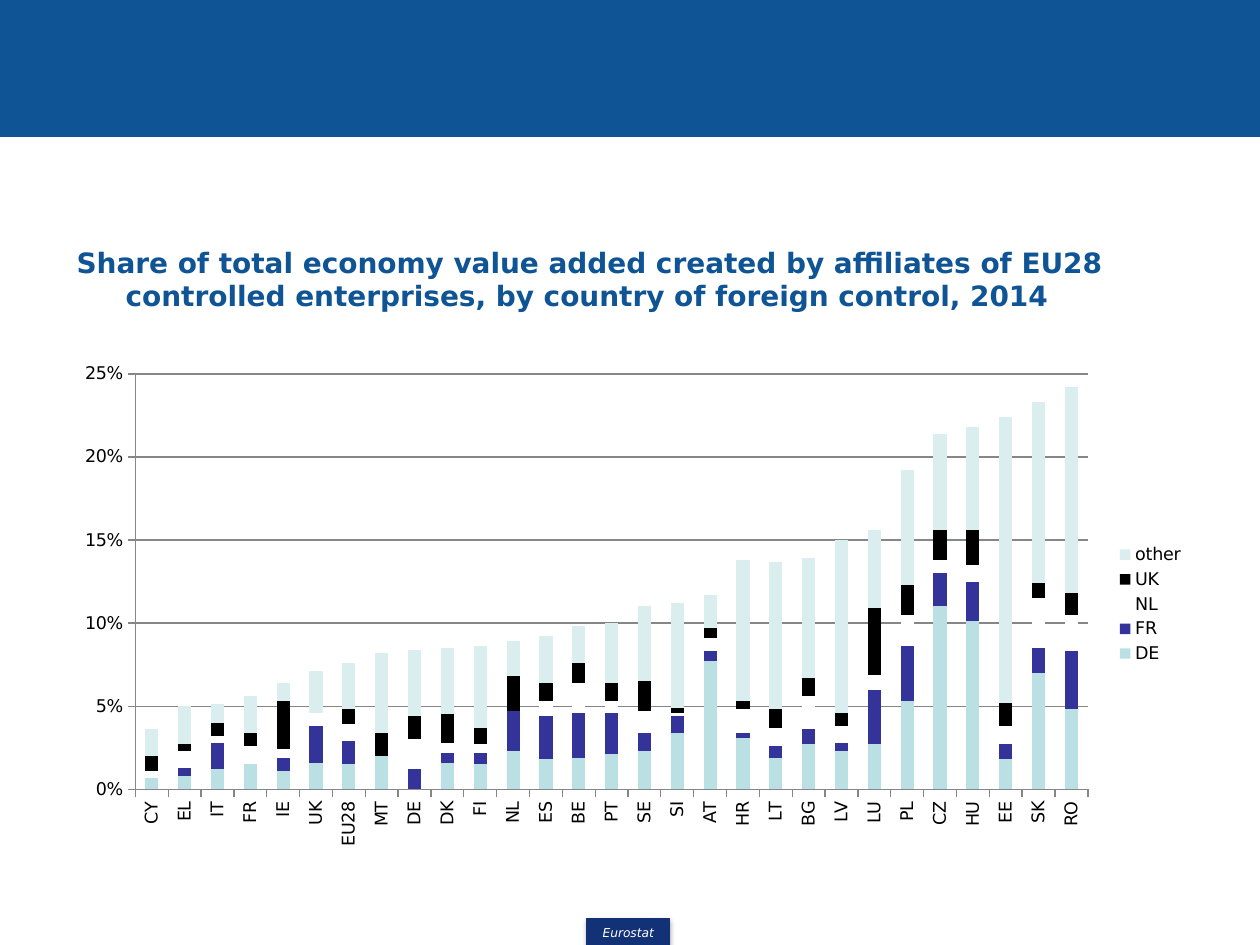
"""Build the slide on value added by EU28 controlled affiliates in 2014."""
import lxml.etree
import pptx
import pptx.chart.data
import pptx.dml.color
import pptx.enum.chart
import pptx.enum.shapes
import pptx.enum.text
import pptx.oxml
import pptx.util

Pt = pptx.util.Pt
RGBColor = pptx.dml.color.RGBColor
ALIGN = pptx.enum.text.PP_ALIGN
XL = pptx.enum.chart

BLUE = RGBColor(0x0F, 0x54, 0x94)
NAVY = RGBColor(0x13, 0x31, 0x76)
WHITE = RGBColor(0xFF, 0xFF, 0xFF)
BLACK = RGBColor(0, 0, 0)
GREY = RGBColor(0x86, 0x86, 0x86)
TEAL = RGBColor(0xBB, 0xE0, 0xE3)
INDIGO = RGBColor(0x33, 0x33, 0x99)
PALE = RGBColor(0xDA, 0xED, 0xEF)
FONT = "DejaVu Sans"
A = "http://schemas.openxmlformats.org/drawingml/2006/main"
C = "http://schemas.openxmlformats.org/drawingml/2006/chart"


def set_text(s, text, size, color, bold=False, italic=False, align=ALIGN.LEFT, hang=0):
    tf = s.text_frame
    tf.word_wrap = True
    tf.vertical_anchor = pptx.enum.text.MSO_ANCHOR.MIDDLE
    p = tf.paragraphs[0]
    p.alignment = align
    if hang:
        pPr = p._p.get_or_add_pPr()
        pPr.set("marL", str(Pt(hang)))
        pPr.set("indent", str(-Pt(hang)))
    r = p.add_run()
    r.text = text
    r.font.name = FONT
    r.font.size = Pt(size)
    r.font.bold = bold
    r.font.italic = italic
    r.font.color.rgb = color


prs = pptx.Presentation()
prs.slide_width, prs.slide_height = Pt(720), Pt(540)
slide = prs.slides.add_slide(prs.slide_layouts[6])

bars = []
for x, y, w, h, color in [(0, 0, 720, 78, BLUE), (335.5, 525, 47, 15.5, NAVY)]:
    s = slide.shapes.add_shape(
        pptx.enum.shapes.MSO_SHAPE.RECTANGLE, Pt(x), Pt(y), Pt(w), Pt(h))
    s.shadow.inherit = False
    s.fill.solid()
    s.fill.fore_color.rgb = color
    s.line.color.rgb = color
    s.line.width = Pt(0.75)
    bars.append(s)

badge = bars[1]
tf = badge.text_frame
tf.margin_left = tf.margin_right = tf.margin_top = tf.margin_bottom = 0
set_text(badge, "Eurostat", size=7, color=WHITE, italic=True, align=ALIGN.CENTER)
effects = badge._element.spPr.find(f"{{{A}}}effectLst")
effects.append(pptx.oxml.parse_xml(
    f'<a:outerShdw xmlns:a="{A}" blurRad="{Pt(3.1)}" dist="{Pt(1.8)}" dir="5400000" '
    'rotWithShape="0"><a:srgbClr val="000000"><a:alpha val="35000"/></a:srgbClr></a:outerShdw>'))

title = slide.shapes.add_textbox(Pt(36.75), Pt(122.5), Pt(648), Pt(73.5))
set_text(title, "Share of total economy value added created by affiliates of EU28 "
         "controlled enterprises, by country of foreign control, 2014",
         size=16, color=BLUE, bold=True, hang=28)

countries = ("CY EL IT FR IE UK EU28 MT DE DK FI NL ES BE PT SE SI AT HR LT BG LV LU "
             "PL CZ HU EE SK RO").split()
series = [
    ("DE", TEAL, [
        0.007, 0.008, 0.012, 0.015, 0.011, 0.016, 0.015, 0.02, 0, 0.016,
        0.015, 0.023, 0.018, 0.019, 0.021, 0.023, 0.034, 0.077, 0.031, 0.019,
        0.027, 0.023, 0.027, 0.053, 0.11, 0.101, 0.018, 0.07, 0.048]),
    ("FR", INDIGO, [
        0, 0.005, 0.016, 0, 0.008, 0.022, 0.014, 0, 0.012, 0.006,
        0.007, 0.024, 0.026, 0.027, 0.025, 0.011, 0.01, 0.006, 0.003, 0.007,
        0.009, 0.005, 0.033, 0.033, 0.02, 0.024, 0.009, 0.015, 0.035]),
    ("NL", WHITE, [
        0.004, 0.01, 0.004, 0.011, 0.005, 0.008, 0.01, 0, 0.018, 0.006,
        0.005, 0, 0.009, 0.018, 0.007, 0.013, 0.002, 0.008, 0.014, 0.011,
        0.02, 0.01, 0.009, 0.019, 0.008, 0.01, 0.011, 0.03, 0.022]),
    ("UK", BLACK, [
        0.009, 0.004, 0.008, 0.008, 0.029, 0, 0.009, 0.014, 0.014, 0.017,
        0.01, 0.021, 0.011, 0.012, 0.011, 0.018, 0.003, 0.006, 0.005, 0.011,
        0.011, 0.008, 0.04, 0.018, 0.018, 0.021, 0.014, 0.009, 0.013]),
    ("other", PALE, [
        0.016, 0.023, 0.011, 0.022, 0.011, 0.025, 0.028, 0.048, 0.04, 0.04,
        0.049, 0.021, 0.028, 0.022, 0.036, 0.045, 0.063, 0.02, 0.085, 0.089,
        0.072, 0.104, 0.047, 0.069, 0.058, 0.062, 0.172, 0.109, 0.124]),
]
data = pptx.chart.data.CategoryChartData(number_format="0%")
data.categories = countries
for name, color, values in series:
    data.add_series(name, values)

chart = slide.shapes.add_chart(
    XL.XL_CHART_TYPE.COLUMN_STACKED, Pt(36), Pt(202.25), Pt(648), Pt(286), data).chart
chart.has_title = False
chart.font.name = FONT
chart.font.size = Pt(10)
chart.font.color.rgb = BLACK
chart.has_legend = True
chart.legend.position = XL.XL_LEGEND_POSITION.RIGHT
chart.legend.include_in_layout = False

plot = chart.plots[0]
plot.gap_width = 150
plot.overlap = 100
plot.vary_by_categories = False
for bar, (name, color, values) in zip(plot.series, series):
    bar.format.fill.solid()
    bar.format.fill.fore_color.rgb = color
    bar.invert_if_negative = False

value_axis, category_axis = chart.value_axis, chart.category_axis
for axis in (value_axis, category_axis):
    axis.major_tick_mark = XL.XL_TICK_MARK.OUTSIDE
    axis.minor_tick_mark = XL.XL_TICK_MARK.NONE
    axis.format.line.color.rgb = GREY
    axis.format.line.width = Pt(0.75)
    axis.tick_labels.font.size = Pt(10)
value_axis.minimum_scale = 0
value_axis.maximum_scale = 0.25
value_axis.major_unit = 0.05
value_axis.tick_labels.number_format = "0%"
value_axis.tick_labels.number_format_is_linked = False
value_axis.has_major_gridlines = True
value_axis.major_gridlines.format.line.color.rgb = GREY
value_axis.major_gridlines.format.line.width = Pt(0.75)
category_axis.has_major_gridlines = False
category_axis._element.find(f"{{{C}}}txPr/{{{A}}}bodyPr").set("rot", "-5400000")

plot_area = chart._chartSpace.chart.plotArea
for old in plot_area.findall(f"{{{C}}}layout"):
    plot_area.remove(old)
layout = lxml.etree.Element(f"{{{C}}}layout")
manual = lxml.etree.SubElement(layout, f"{{{C}}}manualLayout")
for tag, val in [("layoutTarget", "inner"), ("xMode", "edge"), ("yMode", "edge"),
                 ("x", 46 / 720), ("y", 0.04), ("w", 0.84), ("h", 0.83)]:
    lxml.etree.SubElement(manual, f"{{{C}}}{tag}").set("val", str(val))
plot_area.insert(0, layout)

prs.save("out.pptx")
